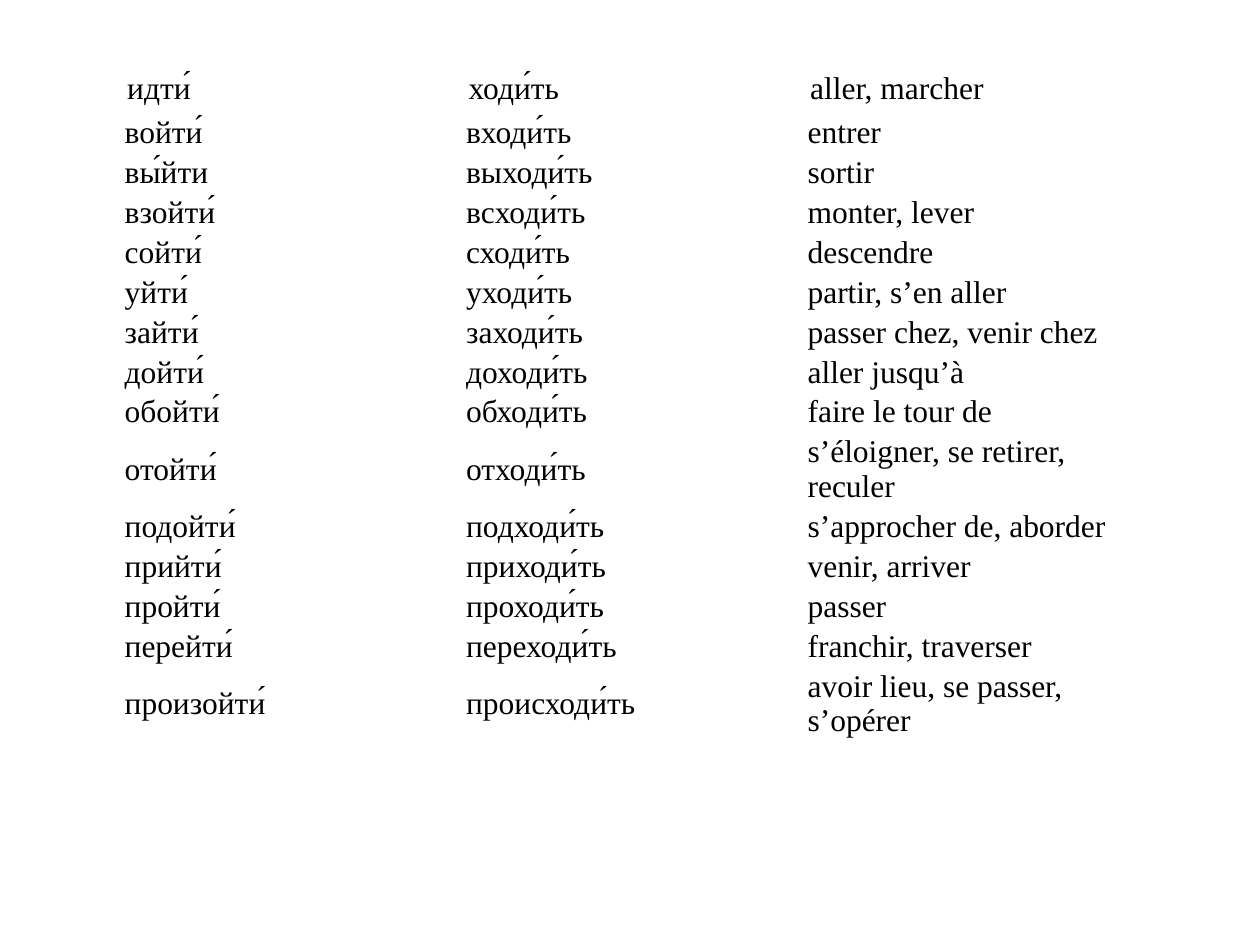
"""Build a slide with a table of Russian verbs of motion and their French meanings."""
import pptx
import pptx.util
import pptx.dml.color

VERBS = [
    ("идти́", "ходи́ть", "aller, marcher"),
    ("войти́", "входи́ть", "entrer"),
    ("вы́йти", "выходи́ть", "sortir"),
    ("взoйти́", "вcходи́ть", "monter, lever"),
    ("сойти́", "сходи́ть", "descendre"),
    ("уйти́", "уходи́ть", "partir, s’en aller"),
    ("зайти́", "заходи́ть", "passer chez, venir chez"),
    ("дойти́", "доходи́ть", "aller jusqu’à"),
    ("обойти́", "обходи́ть", "faire le tour de"),
    ("отойти́", "отходи́ть", "s’éloigner, se retirer, reculer"),
    ("подойти́", "подходи́ть", "s’approcher de, aborder"),
    ("прийти́", "приходи́ть", "venir, arriver"),
    ("пройти́", "проходи́ть", "passer"),
    ("перейти́", "переходи́ть", "franchir, traverser"),
    ("произойти́", "происходи́ть", "avoir lieu, se passer, s’opérer"),
]
THEME = {
    "font": "Times New Roman",
    "size": pptx.util.Pt(18),
    "ink": pptx.dml.color.RGBColor(0, 0, 0),
    "paper": pptx.dml.color.RGBColor(255, 255, 255),
}
WIDE, HIGH = 10, 7.5
LEFT, TOP, COL = 0.91, 0.52, 2.71
ROW, LAST = 0.29, 0.45
PAD_X, PAD_Y = 0.08, 0.02


def style(cell, text, tight):
    """Fill one cell, with narrow margins and centred height if tight."""
    cell.text = text
    cell.fill.solid()
    cell.fill.fore_color.rgb = THEME["paper"]
    if tight:
        cell.vertical_anchor = pptx.enum.text.MSO_ANCHOR.MIDDLE
        cell.margin_left = cell.margin_right = pptx.util.Inches(PAD_X)
        cell.margin_top = cell.margin_bottom = pptx.util.Inches(PAD_Y)
    font = cell.text_frame.paragraphs[0].font
    font.name, font.size, font.bold = THEME["font"], THEME["size"], False
    font.color.rgb = THEME["ink"]


def main():
    """Lay out the table and save the deck."""
    inch = pptx.util.Inches
    deck = pptx.Presentation()
    deck.slide_width, deck.slide_height = inch(WIDE), inch(HIGH)
    slide = deck.slides.add_slide(deck.slide_layouts[6])
    rows, cols = len(VERBS), len(VERBS[0])
    high = ROW * (rows - 1) + LAST
    table = slide.shapes.add_table(
        rows, cols, inch(LEFT), inch(TOP), inch(COL * cols), inch(high)
    ).table
    table.first_row = table.horz_banding = False
    for col in table.columns:
        col.width = inch(COL)
    for r, verb in enumerate(VERBS):
        table.rows[r].height = inch(LAST if r == rows - 1 else ROW)
        for c, text in enumerate(verb):
            style(table.cell(r, c), text, tight=r > 0)
    deck.save("out.pptx")


if __name__ == "__main__":
    import pptx.enum.text
    main()
